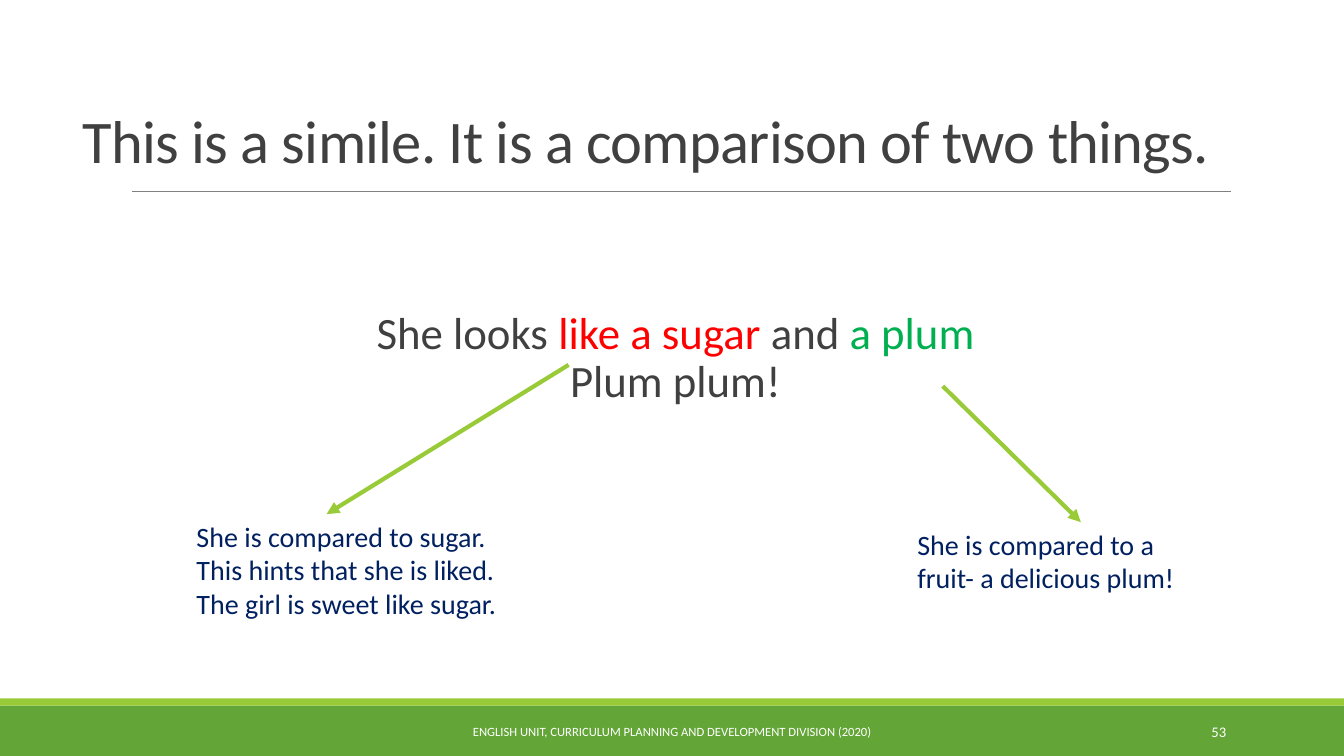
"""Build the slide that explains the simile about sugar and a plum."""
import pptx
import pptx.dml.color
import pptx.enum.shapes
import pptx.enum.text
import pptx.oxml.ns
import pptx.util
from lxml import etree

RGB = pptx.dml.color.RGBColor
Inches = pptx.util.Inches
Pt = pptx.util.Pt
ALIGN = pptx.enum.text.PP_ALIGN
ANCHOR = pptx.enum.text.MSO_ANCHOR

GREEN = RGB(0x63, 0xA5, 0x37)
LIME = RGB(0x99, 0xCB, 0x38)
GRAY = RGB(0x80, 0x80, 0x80)
DARK = RGB(0x40, 0x40, 0x40)
RED = RGB(0xFF, 0x00, 0x00)
PLUM_GREEN = RGB(0x00, 0xB0, 0x50)
NAVY = RGB(0x00, 0x20, 0x60)
WHITE = RGB(0xFF, 0xFF, 0xFF)


def add_text(slide, box, paragraphs, size, color, align=ALIGN.LEFT, anchor=ANCHOR.TOP):
    frame = slide.shapes.add_textbox(*map(Inches, box)).text_frame
    frame.word_wrap = True
    frame.vertical_anchor = anchor
    frame.text = "\n".join(paragraphs)
    for paragraph in frame.paragraphs:
        paragraph.alignment = align
        for run in paragraph.runs:
            run.font.name = "Calibri"
            run.font.size = Pt(size)
            run.font.color.rgb = color
    return frame


def add_line(slide, start, end, color, width):
    line = slide.shapes.add_connector(
        pptx.enum.shapes.MSO_CONNECTOR.STRAIGHT, *map(Inches, start + end))
    line.line.color.rgb = color
    line.line.width = Pt(width)
    etree.SubElement(line._element.spPr, pptx.oxml.ns.qn("a:effectLst"))
    return line


deck = pptx.Presentation()
deck.slide_width = Inches(13.33)
deck.slide_height = Inches(7.5)
slide = deck.slides.add_slide(deck.slide_layouts[5])

for top, height, color in [(7, 0.5, GREEN), (6.93, 0.07, LIME)]:
    band = slide.shapes.add_shape(
        pptx.enum.shapes.MSO_SHAPE.RECTANGLE,
        0, Inches(top), deck.slide_width, Inches(height))
    band.shadow.inherit = False
    band.fill.solid()
    band.fill.fore_color.rgb = color
    band.line.fill.background()

add_line(slide, (1.31, 1.9), (12.21, 1.9), GRAY, 0.5)

title = slide.shapes.title
title.left, title.top, title.width, title.height = map(Inches, (0.72, 0.69, 11.44, 1.1))
heading = title.text_frame
heading.text = "This is a simile. It is a comparison of two things."
heading.word_wrap = True
heading.auto_size = pptx.enum.text.MSO_AUTO_SIZE.NONE
heading.vertical_anchor = ANCHOR.BOTTOM
heading.paragraphs[0].alignment = ALIGN.LEFT
heading.paragraphs[0].line_spacing = 0.85
heading_run = heading.paragraphs[0].runs[0]
heading_run.font.name = "Calibri"
heading_run.font.size = Pt(43.2)
heading_run.font.color.rgb = DARK
heading_run._r.get_or_add_rPr().set("spc", "-50")

verse = add_text(slide, (1.2, 3.03, 11, 1.2), [""], 32, DARK, ALIGN.CENTER)
verse.margin_left = verse.margin_right = 0
verse_line = verse.paragraphs[0]
verse_line.line_spacing = 0.9
for words, color in [("She looks ", DARK), ("like a sugar ", RED), ("and ", DARK),
                     ("a plum", PLUM_GREEN), ("Plum plum!", DARK)]:
    if words == "Plum plum!":
        verse_line.add_line_break()
    run = verse_line.add_run()
    run.text = words
    run.font.name = "Calibri"
    run.font.size = Pt(32)
    run.font.color.rgb = color

add_text(slide, (4.03, 7.06, 5.27, 0.4),
         ["ENGLISH UNIT, CURRICULUM PLANNING AND DEVELOPMENT DIVISION (2020)"],
         9, WHITE, ALIGN.CENTER, ANCHOR.MIDDLE)
add_text(slide, (10.83, 7.06, 1.43, 0.4), ["53"], 10.5, WHITE, ALIGN.RIGHT, ANCHOR.MIDDLE)

add_text(slide, (1.85, 5.1, 3.59, 1.11),
         ["She is compared to sugar.",
          "This hints that she is liked. The girl is sweet like sugar."], 20, NAVY)
add_text(slide, (9, 5.18, 2.76, 0.77),
         ["She is compared to a fruit- a delicious plum!"], 20, NAVY)

for start, end in [((5.64, 3.62), (3.24, 5.1)), ((9.35, 3.83), (10.72, 5.18))]:
    arrow = add_line(slide, start, end, LIME, 3)
    etree.SubElement(arrow.line._get_or_add_ln(), pptx.oxml.ns.qn("a:tailEnd"), type="triangle")

deck.save("out.pptx")
